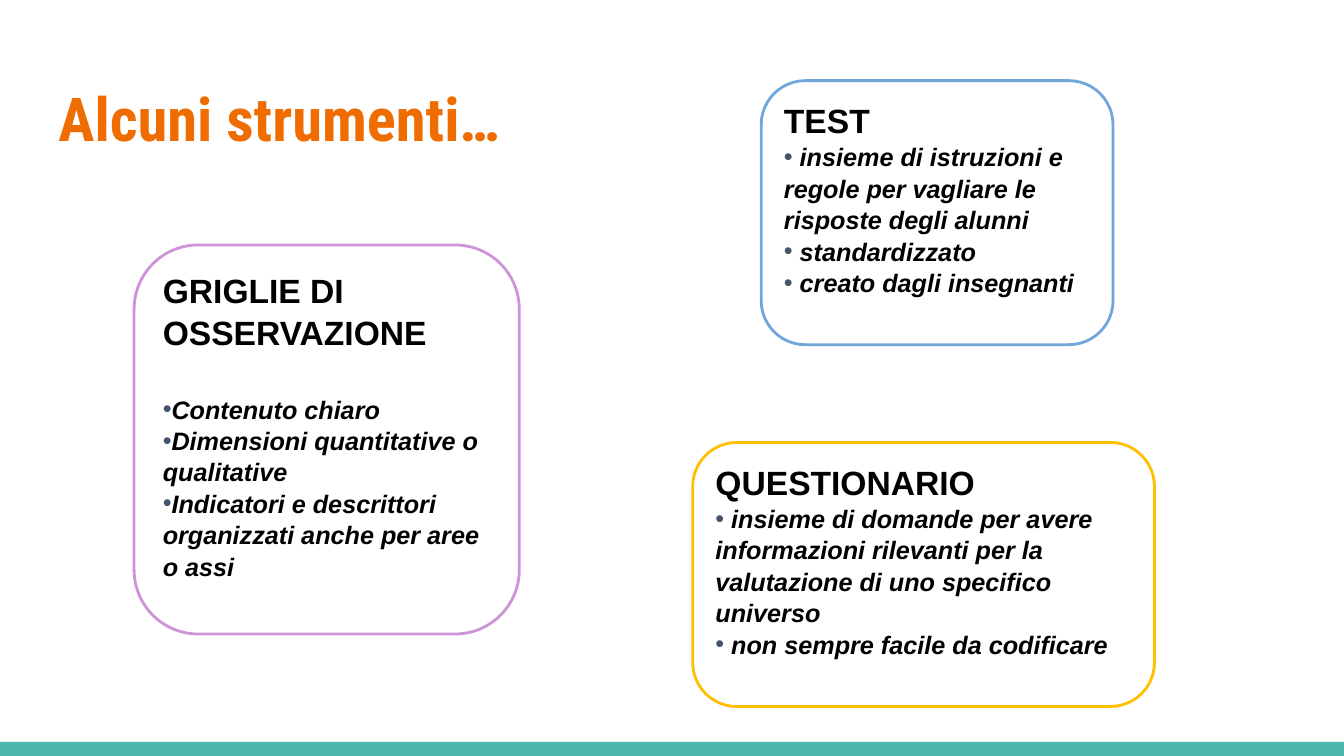
from dataclasses import dataclass

from lxml.etree import SubElement
from pptx import Presentation
from pptx.dml.color import RGBColor
from pptx.enum.shapes import MSO_SHAPE as Shape
from pptx.enum.text import MSO_ANCHOR as Anchor, PP_ALIGN as Align
from pptx.oxml.ns import qn
from pptx.util import Emu, Inches, Pt

WIDTH, HEIGHT = Inches(13.33), Inches(7.5)
BLACK, BULLET = "000000", "44546A"
LINE_SPACING = 1.04


@dataclass
class Area:
    """A rectangle in percent of the slide's width and height."""
    left: float
    top: float
    width: float
    height: float

    def lengths(self) -> tuple[Emu, ...]:
        """Turn the percentages into slide lengths."""
        return (Emu(int(WIDTH * self.left / 100)), Emu(int(HEIGHT * self.top / 100)),
                Emu(int(WIDTH * self.width / 100)), Emu(int(HEIGHT * self.height / 100)))


@dataclass
class Card:
    """A rounded box with a heading and bullet points."""
    area: Area
    outline: str
    heading: str
    points: list[str]
    gap: float = 0


CARDS = [
    Card(Area(9.98, 32.4, 28.66, 51.47), "CE93D8", "GRIGLIE DI OSSERVAZIONE",
         ["Contenuto chiaro", "Dimensioni quantitative o qualitative",
          "Indicatori e descrittori organizzati anche per aree o assi"], 28.7),
    Card(Area(56.64, 10.67, 26.18, 34.93), "71A6DB", "TEST",
         [" insieme di istruzioni e regole per vagliare le risposte degli alunni",
          " standardizzato", " creato dagli insegnanti"]),
    Card(Area(51.54, 58.53, 34.36, 34.93), "FFC000", "QUESTIONARIO",
         [" insieme di domande per avere informazioni rilevanti per la "
          "valutazione di uno specifico universo",
          " non sempre facile da codificare"]),
]


def color(code: str) -> RGBColor:
    """Read a colour from its hex string."""
    return RGBColor.from_string(code)


def write(para, text: str, size: float, code: str = BLACK,
          face: str = "Arial", italic: bool = False) -> None:
    """Fill a paragraph with bold text."""
    para.text = text
    para.alignment = Align.LEFT
    for span in para.runs:
        font = span.font
        font.name, font.size, font.bold, font.italic = face, Pt(size), True, italic
        font.color.rgb = color(code)


def add_bullet(para) -> None:
    """Give a paragraph a coloured bullet."""
    props = para._p.get_or_add_pPr()
    props.set("marL", "0")
    props.set("indent", str(Inches(-0.01)))
    tint = SubElement(props, qn("a:buClr"))
    SubElement(tint, qn("a:srgbClr")).set("val", BULLET)
    SubElement(props, qn("a:buFont")).set("typeface", "Arial")
    SubElement(props, qn("a:buChar")).set("char", "•")


def draw_footer(page) -> None:
    """Draw the band along the bottom edge."""
    band = page.shapes.add_shape(Shape.RECTANGLE, *Area(0, 98.13, 100, 1.87).lengths())
    band.shadow.inherit = False
    band.fill.solid()
    band.fill.fore_color.rgb = color("4DB6AC")
    band.line.fill.background()


def draw_title(page, text: str) -> None:
    """Write the slide's title."""
    box = page.shapes.add_textbox(*Area(3.38, 8.67, 93.17, 13.73).lengths())
    frame = box.text_frame
    frame.word_wrap = True
    frame.vertical_anchor = Anchor.MIDDLE
    frame.margin_left = frame.margin_right = Inches(0.13)
    frame.margin_top = frame.margin_bottom = Inches(0.13)
    write(frame.paragraphs[0], text, 43.2, "EF6C00", "Roboto Condensed")


def draw_card(page, card: Card) -> None:
    """Draw one rounded box with its text."""
    box = page.shapes.add_shape(Shape.ROUNDED_RECTANGLE, *card.area.lengths())
    box.shadow.inherit = False
    box.fill.background()
    box.line.color.rgb = color(card.outline)
    box.line.width = Pt(2)
    frame = box.text_frame
    frame.word_wrap = True
    frame.vertical_anchor = Anchor.TOP
    heading = frame.paragraphs[0]
    write(heading, card.heading, 24)
    heading.line_spacing = LINE_SPACING
    for index, point in enumerate(card.points):
        para = frame.add_paragraph()
        write(para, point, 18, italic=True)
        para.line_spacing = LINE_SPACING
        para.space_before = Pt(0 if index else card.gap)
        add_bullet(para)


def main() -> None:
    """Build the deck and save it."""
    deck = Presentation()
    deck.slide_width, deck.slide_height = WIDTH, HEIGHT
    page = deck.slides.add_slide(deck.slide_layouts[6])
    draw_footer(page)
    draw_title(page, "Alcuni strumenti…")
    for card in CARDS:
        draw_card(page, card)
    deck.save("out.pptx")


if __name__ == "__main__":
    main()
